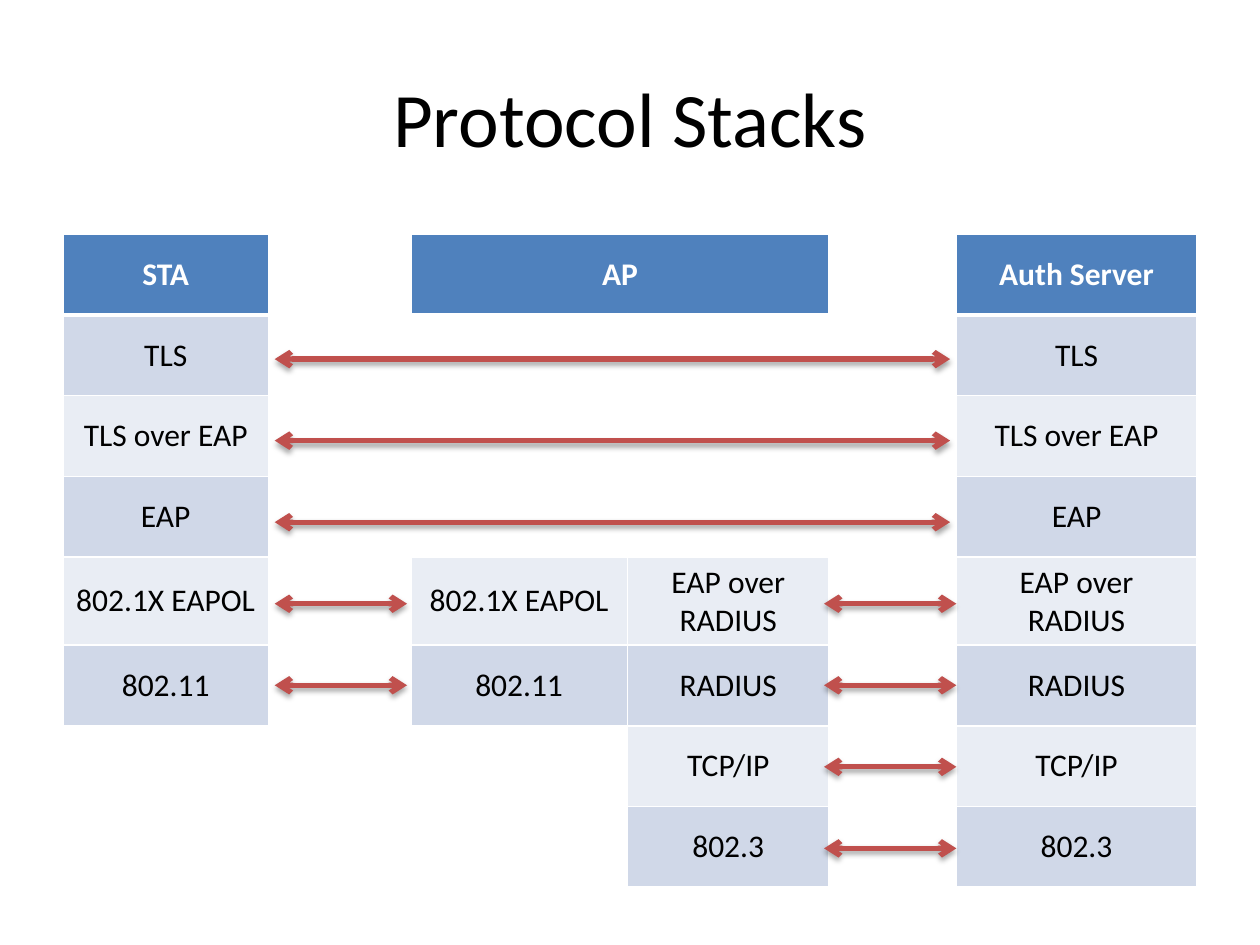
from lxml import etree
from pptx import Presentation
from pptx.dml.color import RGBColor
from pptx.enum import shapes, text
from pptx.oxml import parse_xml
from pptx.oxml.ns import nsdecls, qn
from pptx.util import Pt

WHITE, BLUE, RED = "FFFFFF", "4F81BD", "C0504D"
BANDS = ("D0D8E8", "E9EDF4")
COLS = (117.4, 81.4, 123.8, 115.2, 72.7, 137.5)
ROW = 46.08
STEP = 46.6
ROWS = (
    ("STA", "", "AP", "", "", "Auth Server"),
    ("TLS", "", "", "", "", "TLS"),
    ("TLS over EAP", "", "", "", "", "TLS over EAP"),
    ("EAP", "", "", "", "", "EAP"),
    ("802.1X EAPOL", "", "802.1X EAPOL", "EAP over RADIUS", "", "EAP over RADIUS"),
    ("802.11", "", "802.11", "RADIUS", "", "RADIUS"),
    ("", "", "", "TCP/IP", "", "TCP/IP"),
    ("", "", "", "802.3", "", "802.3"),
)
LINKS = (
    (121, 506.9, range(0, 3)),
    (121, 196.6, range(3, 5)),
    (434.9, 510.5, range(3, 7)),
)


def color(code):
    """Turn a hex string into a colour."""
    return RGBColor.from_string(code)


def write(frame, words, size=18, ink="000000", bold=False):
    """Put one centred line of formatted text in a frame."""
    frame.word_wrap = True
    para = frame.paragraphs[0]
    para.alignment = text.PP_ALIGN.CENTER
    run = para.add_run()
    run.text = words
    font = run.font
    font.name, font.size, font.bold = "Calibri", Pt(size), bold
    font.color.rgb = color(ink)


def edge(cell, row):
    """Draw white cell borders, heavy under the header."""
    wide = {"T": 3 if row == 1 else 1, "B": 3 if row == 0 else 1}
    props = cell._tc.get_or_add_tcPr()
    for side in "LRTB":
        width = Pt(wide.get(side, 1))
        props.append(parse_xml(
            f'<a:ln{side} {nsdecls("a")} w="{width}"><a:solidFill>'
            f'<a:srgbClr val="{WHITE}"/></a:solidFill></a:ln{side}>'))


def title(slide, left, top, width, height):
    """Place the slide title."""
    frame = slide.shapes.add_textbox(Pt(left), Pt(top), Pt(width), Pt(height)).text_frame
    frame.vertical_anchor = text.MSO_ANCHOR.MIDDLE
    write(frame, "Protocol Stacks", size=44)


def stacks(slide, left, top):
    """Place the table of protocol stacks."""
    grid = slide.shapes.add_table(
        len(ROWS), len(COLS), Pt(left), Pt(top),
        Pt(sum(COLS)), Pt(ROW * len(ROWS))).table
    for col, width in zip(grid.columns, COLS):
        col.width = Pt(width)
    for i, names in enumerate(ROWS):
        grid.rows[i].height = Pt(ROW)
        tint = BANDS[(i - 1) % 2] if i else BLUE
        for j, name in enumerate(names):
            cell = grid.cell(i, j)
            edge(cell, i)
            cell.fill.solid()
            cell.fill.fore_color.rgb = color(tint if name else WHITE)
            cell.vertical_anchor = text.MSO_ANCHOR.MIDDLE
            if name:
                write(cell.text_frame, name, ink="000000" if i else WHITE, bold=i == 0)
    grid.cell(0, 2).merge(grid.cell(0, 3))


def arrow(slide, start, end, y):
    """Draw a shadowed two-way arrow at one height."""
    link = slide.shapes.add_connector(
        shapes.MSO_CONNECTOR.STRAIGHT, Pt(start), Pt(y), Pt(end), Pt(y))
    link.line.color.rgb = color(RED)
    link.line.width = Pt(3)
    line = link.line._get_or_add_ln()
    for tag in ("a:headEnd", "a:tailEnd"):
        etree.SubElement(line, qn(tag), type="arrow")
    link._element.spPr.append(parse_xml(
        f'<a:effectLst {nsdecls("a")}><a:outerShdw blurRad="{Pt(3.1)}" '
        f'dist="{Pt(1.8)}" dir="5400000" rotWithShape="0"><a:srgbClr val="000000">'
        '<a:alpha val="35000"/></a:srgbClr></a:outerShdw></a:effectLst>'))


def links(slide, left, top):
    """Draw the arrows between peer layers."""
    for start, end, layers in LINKS:
        for i in layers:
            arrow(slide, left + start, left + end, top + 71.2 + STEP * i)


def main():
    """Build and save the slide."""
    deck = Presentation()
    deck.slide_width, deck.slide_height = Pt(720), Pt(540)
    slide = deck.slides.add_slide(deck.slide_layouts[6])
    title(slide, 36, 21.6, 648, 90)
    stacks(slide, 36, 134)
    links(slide, 36, 134)
    deck.save("out.pptx")


if __name__ == "__main__":
    main()
